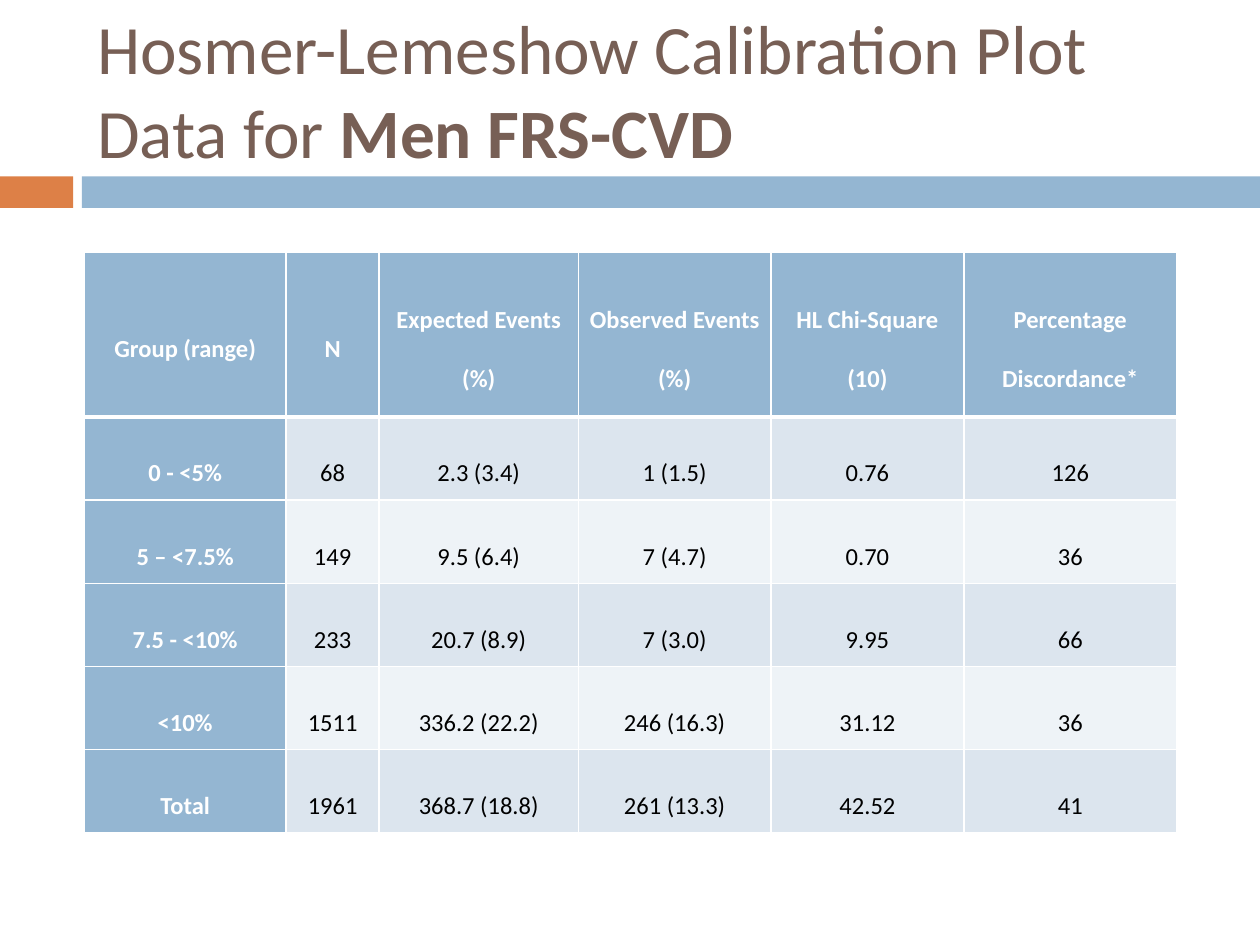
import pptx
import pptx.util
import pptx.dml.color
import pptx.enum.shapes
import pptx.enum.text
import pptx.oxml
from lxml import etree

Inches, Pt = pptx.util.Inches, pptx.util.Pt
MIDDLE = pptx.enum.text.MSO_ANCHOR.MIDDLE
BLUE, ORANGE, BROWN, WHITE = "94B6D2", "DD8047", "775F55", "FFFFFF"
BANDS = ["DCE5EE", "EEF3F7"]


def paint(color, value):
    color.rgb = pptx.dml.color.RGBColor.from_string(value)


def add_run(para, text, size, color, bold):
    run = para.add_run()
    run.text = text
    run.font.name = "Calibri"
    run.font.size = Pt(size)
    run.font.bold = bold
    paint(run.font.color, color)


deck = pptx.Presentation()
deck.slide_width, deck.slide_height = Inches(10), Inches(7.5)
slide = deck.slides.add_slide(deck.slide_layouts[5])

# Bars under the title
for left, width, color in [(0, 0.58, ORANGE), (0.65, 9.35, BLUE)]:
    bar = slide.shapes.add_shape(
        pptx.enum.shapes.MSO_SHAPE.RECTANGLE,
        Inches(left), Inches(1.4), Inches(width), Inches(0.25))
    bar.shadow.inherit = False
    bar.fill.solid()
    paint(bar.fill.fore_color, color)
    bar.line.fill.background()

# Title, lifted above the bars by its bottom inset
title = slide.shapes.title
title.left, title.top = Inches(0.67), Inches(0.5)
title.width, title.height = Inches(8.92), Inches(1.08)
frame = title.text_frame
frame.word_wrap = True
frame.auto_size = pptx.enum.text.MSO_AUTO_SIZE.NONE
frame.vertical_anchor = MIDDLE
frame.margin_bottom = Inches(0.72)
para = frame.paragraphs[0]
para.alignment = pptx.enum.text.PP_ALIGN.LEFT
add_run(para, "Hosmer-Lemeshow Calibration Plot Data for ", 39.6, BROWN, False)
add_run(para, "Men FRS-CVD", 39.6, BROWN, True)

# Calibration table
rows = [
    ["Group (range)", "N", "Expected Events (%)", "Observed Events (%)",
     "HL Chi-Square (10)", "Percentage Discordance*"],
    ["0 - <5%", "68", "2.3 (3.4)", "1 (1.5)", "0.76", "126"],
    ["5 – <7.5%", "149", "9.5 (6.4)", "7 (4.7)", "0.70", "36"],
    ["7.5 - <10%", "233", "20.7 (8.9)", "7 (3.0)", "9.95", "66"],
    ["<10%", "1511", "336.2 (22.2)", "246 (16.3)", "31.12", "36"],
    ["Total", "1961", "368.7 (18.8)", "261 (13.3)", "42.52", "41"],
]
widths = [1.6, 0.74, 1.58, 1.53, 1.53, 1.69]
heights = [1.31] + [0.66] * 5
table = slide.shapes.add_table(
    len(rows), len(widths), Inches(0.67), Inches(2),
    Inches(sum(widths)), Inches(sum(heights))).table
for col, width in zip(table.columns, widths):
    col.width = Inches(width)
for row, height in zip(table.rows, heights):
    row.height = Inches(height)

for r, row in enumerate(rows):
    for c, text in enumerate(row):
        cell = table.cell(r, c)
        head = r == 0 or c == 0
        cell.vertical_anchor = MIDDLE
        cell.margin_left = cell.margin_right = Inches(0.04)
        cell.margin_top = cell.margin_bottom = 0
        para = cell.text_frame.paragraphs[0]
        para.alignment = pptx.enum.text.PP_ALIGN.CENTER
        para.line_spacing = 2.0
        add_run(para, text, 14, WHITE if head else "000000", head)

        # Borders go before the fill in the cell properties
        props = cell._tc.get_or_add_tcPr()
        for side in "LRTB":
            thick = (r, side) in [(0, "B"), (1, "T")]
            line = etree.SubElement(props, pptx.oxml.ns.qn("a:ln" + side),
                                    w=str(Pt(3 if thick else 1)))
            fill = etree.SubElement(line, pptx.oxml.ns.qn("a:solidFill"))
            etree.SubElement(fill, pptx.oxml.ns.qn("a:srgbClr"), val=WHITE)
        cell.fill.solid()
        paint(cell.fill.fore_color, BLUE if head else BANDS[(r - 1) % 2])

deck.save("out.pptx")
